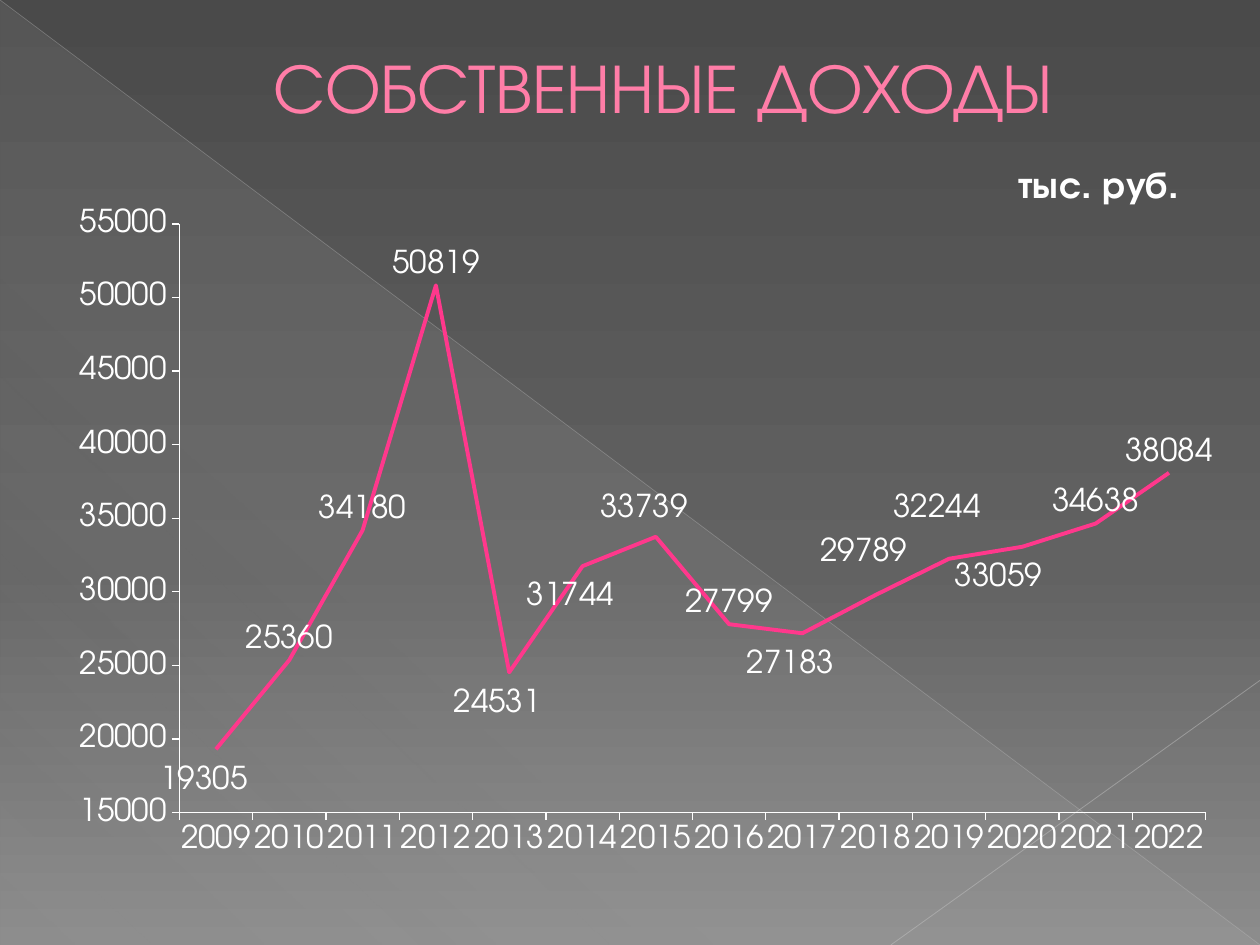
from pptx import Presentation
from pptx import util as u
from pptx.chart.data import CategoryChartData
from pptx.dml.color import RGBColor
from pptx.enum import chart as ch, shapes, text
from pptx.oxml import parse_xml
from pptx.oxml.ns import nsdecls, qn

FONT = "TeX Gyre Adventor"
WIDTH, HEIGHT = 10, 7.5


def rgb(value):
    """Turn a hex string into a colour."""
    return RGBColor.from_string(value)


def alpha_xml(percent):
    """Give the XML of an opacity in percent."""
    return f'<a:alpha {nsdecls("a")} val="{percent * 1000}"/>'


def set_gradient(fill, parent, stops, angle):
    """Fill with a linear gradient of (place, colour, opacity) stops."""
    fill.gradient()
    old = next(parent.iter(qn("a:gradFill")))
    marks = "".join(
        f'<a:gs pos="{place * 1000}"><a:srgbClr val="{colour}">{alpha_xml(opacity)}'
        "</a:srgbClr></a:gs>" for place, colour, opacity in stops)
    old.getparent().replace(old, parse_xml(
        f'<a:gradFill {nsdecls("a")} rotWithShape="1"><a:gsLst>{marks}</a:gsLst>'
        f'<a:lin ang="{angle * 60000}" scaled="0"/></a:gradFill>'))


def set_layout(element, index, inner=False, **shares):
    """Place a chart part by hand, in shares of the chart's size."""
    for old in element.findall(qn("c:layout")):
        element.remove(old)
    target = '<c:layoutTarget val="inner"/>' if inner else ""
    modes = "" if element.tag == qn("c:dLbl") else (
        '<c:xMode val="edge"/><c:yMode val="edge"/>')
    sizes = "".join(f'<c:{key} val="{share}"/>' for key, share in shares.items())
    element.insert(index, parse_xml(
        f'<c:layout {nsdecls("c")}><c:manualLayout>{target}{modes}{sizes}'
        "</c:manualLayout></c:layout>"))


def hide_leaders(labels):
    """Switch off the lines from shifted labels to their points."""
    for old in labels.findall(qn("c:showLeaderLines")):
        labels.remove(old)
    labels.append(parse_xml(f'<c:showLeaderLines {nsdecls("c")} val="0"/>'))
    labels.append(parse_xml(
        f'<c:extLst {nsdecls("c")}><c:ext uri="{{CE6537A1-D6FC-4f65-9D91-7224C49458BB}}" '
        'xmlns:c15="http://schemas.microsoft.com/office/drawing/2012/chart">'
        '<c15:showLeaderLines val="0"/></c:ext></c:extLst>'))


class Deck:
    """Hold the style and the current slide; lengths are shares of the slide."""

    def __init__(self):
        """Open a deck with one blank slide."""
        self.show = Presentation()
        self.show.slide_width, self.show.slide_height = u.Inches(WIDTH), u.Inches(HEIGHT)
        self.slide = self.show.slides.add_slide(self.show.slide_layouts[6])
        self.white, self.rose, self.pink, self.wine = "FFFFFF", "FF7DA7", "FF388C", "B12761"

    def place(self, *shares):
        """Turn alternating shares of width and height into lengths."""
        return [u.Inches(share * (HEIGHT if i % 2 else WIDTH)) for i, share in enumerate(shares)]

    def style(self, font, size, bold=False, colour=None):
        """Set the face, size, weight and colour of a font."""
        font.name, font.size, font.bold = FONT, u.Pt(size), bold
        font.color.rgb = rgb(colour or self.white)

    def background(self, stops):
        """Paint the background from top to bottom."""
        set_gradient(self.slide.background.fill, self.slide._element, stops, 90)

    def triangle(self, box, stops, angle):
        """Draw a translucent right triangle."""
        facet = self.slide.shapes.add_shape(shapes.MSO_SHAPE.RIGHT_TRIANGLE, *self.place(*box))
        facet.shadow.inherit = False
        set_gradient(facet.fill, facet._element.spPr, stops, angle)
        facet.line.fill.background()

    def line(self, ends, colour, width, opacity):
        """Draw a thin translucent line."""
        ray = self.slide.shapes.add_connector(shapes.MSO_CONNECTOR.STRAIGHT, *self.place(*ends))
        ray.line.color.rgb, ray.line.width = rgb(colour), u.Pt(width)
        props = ray._element.spPr
        next(props.iter(qn("a:srgbClr"))).append(parse_xml(alpha_xml(opacity)))
        props.append(parse_xml(f'<a:effectLst {nsdecls("a")}/>'))

    def heading(self, box, wording):
        """Write the centred, outlined heading."""
        frame = self.slide.shapes.add_textbox(*self.place(*box)).text_frame
        frame.word_wrap, frame.vertical_anchor = True, text.MSO_ANCHOR.MIDDLE
        frame.text = wording
        line = frame.paragraphs[0]
        line.alignment = text.PP_ALIGN.CENTER
        line._p.get_or_add_pPr().set("marL", str(u.Inches(0.53)))
        self.style(line.runs[0].font, 40, colour=self.rose)
        line.runs[0]._r.get_or_add_rPr().insert(0, parse_xml(
            f'<a:ln {nsdecls("a")} w="{u.Pt(0.5)}"><a:solidFill><a:srgbClr val="{self.wine}"/>'
            "</a:solidFill></a:ln>"))

    def axis(self, axis):
        """Draw an axis in white with outer ticks and no grid."""
        axis.has_major_gridlines = False
        axis.major_tick_mark, axis.minor_tick_mark = ch.XL_TICK_MARK.OUTSIDE, ch.XL_TICK_MARK.NONE
        axis.format.line.color.rgb, axis.format.line.width = rgb(self.white), u.Pt(0.75)

    def line_chart(self, box, unit, values, shifts):
        """Chart values by year, with some labels shifted from above the point."""
        data = CategoryChartData()
        data.categories = [str(year) for year in values]
        data.add_series("Series 1", list(values.values()))
        chart = self.slide.shapes.add_chart(
            ch.XL_CHART_TYPE.LINE, *self.place(*box), data).chart
        self.style(chart.font, 18)
        chart.has_legend = False

        chart.has_title = True
        caption = chart.chart_title
        caption.text_frame.text = unit
        self.style(caption.text_frame.paragraphs[0].runs[0].font, 21.6, True)
        set_layout(caption._element, 1, x=0.82, y=0.02)
        set_layout(next(chart._chartSpace.iter(qn("c:plotArea"))), 0, True,
                   x=0.121, y=0.108, w=0.862, h=0.802)

        for axis in (chart.category_axis, chart.value_axis):
            self.axis(axis)
        scale = chart.value_axis
        scale.minimum_scale, scale.maximum_scale, scale.major_unit = 15000, 55000, 5000

        chart.plots[0].vary_by_categories = False
        income = chart.plots[0].series[0]
        income.smooth = False
        income.marker.style = ch.XL_MARKER_STYLE.NONE
        income.format.line.color.rgb, income.format.line.width = rgb(self.pink), u.Pt(2.25)
        labels = income.data_labels
        labels.show_value, labels.position = True, ch.XL_LABEL_POSITION.ABOVE
        self.style(labels.font, 18)
        years = list(values)
        for year, (right, down) in shifts.items():
            label = income.points[years.index(year)].data_label
            label.position = ch.XL_LABEL_POSITION.ABOVE
            self.style(label.font, 18)
            for element in labels._element.findall(qn("c:dLbl")):
                if element.find(qn("c:idx")).get("val") == str(years.index(year)):
                    set_layout(element, 1, x=right, y=down)
        hide_leaders(labels._element)


def main():
    """Build the slide on own income and save it."""
    deck = Deck()
    deck.background([(0, "4A4A4A", 100), (60, "626262", 100), (100, "8C8C8C", 100)])
    deck.triangle((0, 0, 1, 1), [(0, "D2D2D2", 10), (70, "D2D2D2", 8), (100, "D2D2D2", 1)], 133)
    deck.line((0, 0, 1, 1), "BFBFBF", 0.39, 35)
    deck.line((1, 0.72, 0.707, 1), "C6C6C6", 0.47, 45)
    deck.heading((0.05, 0.04, 0.9, 0.1), "СОБСТВЕННЫЕ ДОХОДЫ")
    income = [19305, 25360, 34180, 50819, 24531, 31744, 33739,
              27799, 27183, 29789, 32244, 33059, 34638, 38084]
    below = 0.07
    shifts = {2009: (-0.01, below), 2013: (-0.01, below), 2014: (-0.01, below),
              2015: (-0.01, -0.01), 2017: (-0.01, below), 2018: (-0.01, -0.03),
              2019: (-0.01, -0.04), 2020: (-0.02, below)}
    deck.line_chart((0.028, 0.153, 0.945, 0.777), "тыс. руб.",
                    dict(enumerate(income, 2009)), shifts)
    deck.show.save("out.pptx")


if __name__ == "__main__":
    main()
